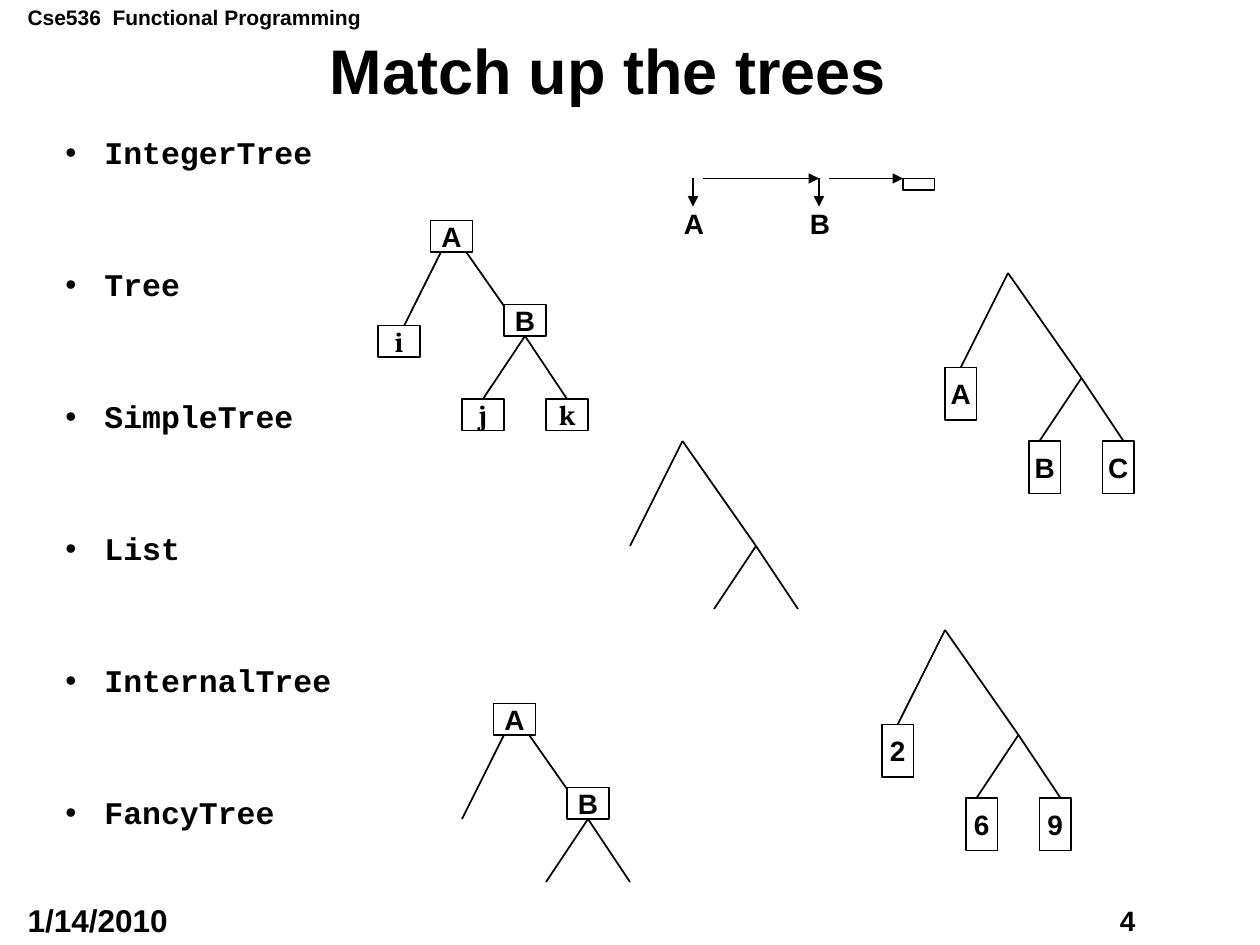
from lxml import etree
from pptx import Presentation
from pptx.dml.color import RGBColor
from pptx.enum.shapes import MSO_CONNECTOR, MSO_SHAPE
from pptx.enum.text import MSO_ANCHOR, MSO_AUTO_SIZE, PP_ALIGN
from pptx.oxml.ns import qn
from pptx.util import Inches, Pt

BLACK = RGBColor(0, 0, 0)
WHITE = RGBColor(255, 255, 255)
RECT = MSO_SHAPE.RECTANGLE
LINE = MSO_CONNECTOR.STRAIGHT
MIDDLE = MSO_ANCHOR.MIDDLE
CENTER = PP_ALIGN.CENTER
FIXED = MSO_AUTO_SIZE.NONE
SANS, SERIF, MONO = "Arial", "Cambria", "Courier New"

# Trees are laid out on a grid of twelfths of an inch, with the root at zero.
EDGES = [(0, 0, -5, 10), (0, 0, 7, 10), (7, 10, 3, 16), (7, 10, 11, 16)]
TALL = [(-6, 9), (2, 16), (9, 16)]
WIDE = [(-7, 9), (1, 16), (9, 16)]
INNER = [(-2, -1), (5, 7)]


def grid(n):
    return Inches(n / 12)


def write(para, text, size, font=SANS):
    run = para.add_run()
    run.text = text
    run.font.size = Pt(size)
    run.font.name = font
    run.font.bold = True
    run.font.color.rgb = BLACK


def link(group, x1, y1, x2, y2, arrow=False):
    line = group.shapes.add_connector(LINE, grid(x1), grid(y1), grid(x2), grid(y2))
    line.line.color.rgb = BLACK
    line.line.width = Pt(1)
    props = line._element.spPr
    if arrow:
        etree.SubElement(props.find(qn("a:ln")), qn("a:tailEnd"), type="triangle")
    etree.SubElement(props, qn("a:effectLst"))


def node(group, x, y, wide, high, text="", font=SANS):
    box = group.shapes.add_shape(RECT, grid(x), grid(y), grid(wide), grid(high))
    box.shadow.inherit = False
    box.fill.solid()
    box.fill.fore_color.rgb = WHITE
    box.line.color.rgb = BLACK
    box.line.width = Pt(1)
    if text:
        frame = box.text_frame
        frame.word_wrap = False
        frame.vertical_anchor = MIDDLE
        frame.paragraphs[0].alignment = CENTER
        write(frame.paragraphs[0], text, 16, font)


def label(shapes, left, top, wide, high, text, size):
    box = shapes.add_textbox(Inches(left), Inches(top), Inches(wide), Inches(high))
    box.text_frame.word_wrap = False
    write(box.text_frame.paragraphs[0], text, size)


def heading(slide, left, top, wide, high):
    title = slide.shapes.title
    title.left, title.top = Inches(left), Inches(top)
    title.width, title.height = Inches(wide), Inches(high)
    frame = title.text_frame
    frame.auto_size = FIXED
    frame.vertical_anchor = MIDDLE
    para = frame.paragraphs[0]
    para.alignment = CENTER
    para.line_spacing = 0.9
    write(para, "Match up the trees", 36)


def names(slide, left, top, wide, high):
    box = slide.shapes.add_textbox(Inches(left), Inches(top), Inches(wide), Inches(high))
    frame = box.text_frame
    frame.word_wrap = True
    items = ["IntegerTree", "Tree", "SimpleTree", "List", "InternalTree", "FancyTree"]
    for i, item in enumerate(items):
        para = frame.add_paragraph() if i else frame.paragraphs[0]
        para.line_spacing = 0.9
        para.space_before = Pt(56 if i else 0)
        props = para._p.get_or_add_pPr()
        props.set("marL", str(Inches(0.31)))
        props.set("indent", str(Inches(-0.31)))
        etree.SubElement(props, qn("a:buFont"), typeface=SANS)
        etree.SubElement(props, qn("a:buChar"), char="•")
        write(para, item, 18, MONO)


def chain(slide, x, y):
    group = slide.shapes.add_group_shape()
    for i, (text, end) in enumerate([("A", 12), ("B", 8)]):
        at = x + 12 * i
        link(group, at, y, at, y + 2.67, True)
        link(group, at + 1, y, at + end, y, True)
        label(group.shapes, at / 12 - 0.17, y / 12 + 0.17, 0.36, 0.37, text, 16)
    node(group, x + 20, y, 3, 1.1)


def tree(slide, x, y, inner="", leaves="", spots=TALL, size=(3, 5), font=SANS):
    group = slide.shapes.add_group_shape()
    for x1, y1, x2, y2 in EDGES:
        link(group, x + x1, y + y1, x + x2, y + y2)
    for text, (dx, dy) in zip(inner, INNER):
        node(group, x + dx, y + dy, 4, 3, text)
    for text, (dx, dy) in zip(leaves, spots):
        node(group, x + dx, y + dy, *size, text, font)


def main():
    deck = Presentation()
    deck.slide_width, deck.slide_height = Inches(10), Inches(7.5)
    slide = deck.slides.add_slide(deck.slide_layouts[5])
    label(slide.shapes, 0.12, -0.01, 2.85, 0.3, "Cse536  Functional Programming", 12)
    label(slide.shapes, 8.79, 7.12, 0.47, 0.36, "4", 16)
    label(slide.shapes, 0.12, 7.1, 1.45, 0.4, "1/14/2010", 18)
    heading(slide, 0.31, 0.31, 9.03, 0.56)
    names(slide, 0.42, 1.04, 4.38, 5.96)
    chain(slide, 66, 17)
    tree(slide, 96, 26, leaves="ABC")
    tree(slide, 90, 60, leaves="269")
    tree(slide, 65, 42)
    tree(slide, 49, 68, inner="AB")
    tree(slide, 43, 22, "AB", "ijk", WIDE, (4, 3), SERIF)
    deck.save("out.pptx")


if __name__ == "__main__":
    main()
